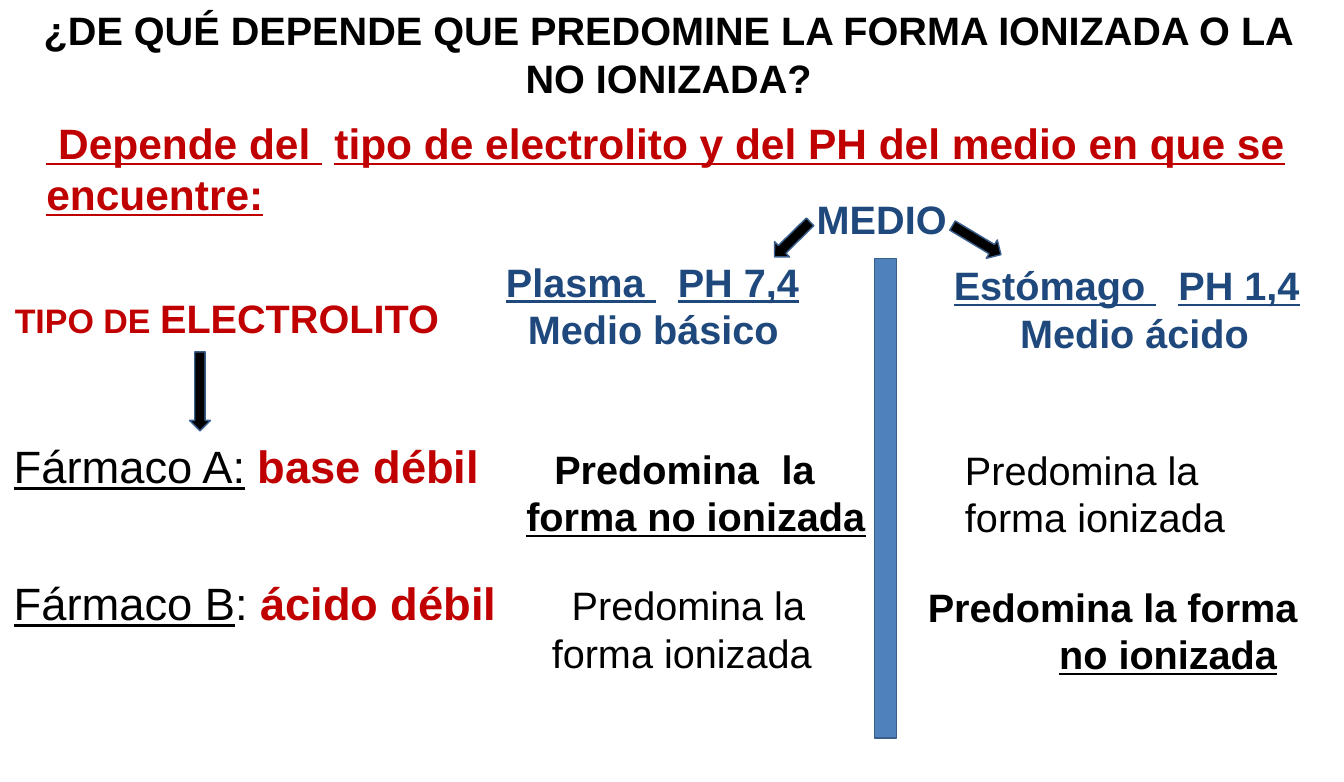
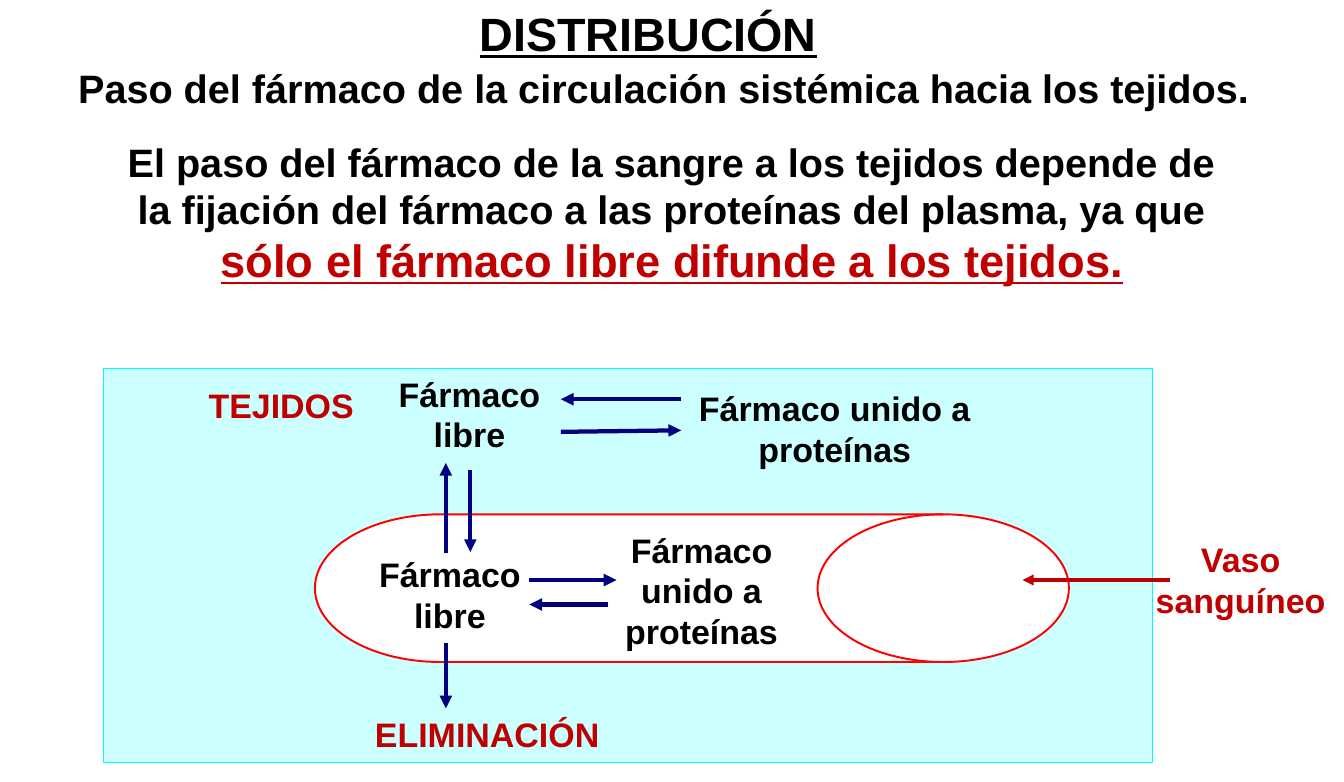
"""Build two slides on drug ionisation and distribution."""
from dataclasses import dataclass

from lxml import etree
from pptx import Presentation
from pptx.dml.color import RGBColor
from pptx.enum.shapes import MSO_CONNECTOR, MSO_SHAPE
from pptx.enum.text import MSO_ANCHOR, MSO_AUTO_SIZE, PP_ALIGN
from pptx.oxml.ns import qn
from pptx.util import Pt

EMU_PER_PX = 9144
SLIDE_WIDTH, SLIDE_HEIGHT = Pt(1899.25), Pt(1105.62)
INSET_X, INSET_Y = 20, 10
FONT = "Arial"
TITLE_AND_CONTENT = 1

LEFT, CENTER = PP_ALIGN.LEFT, PP_ALIGN.CENTER
TOP, NO_AUTOFIT = MSO_ANCHOR.TOP, MSO_AUTO_SIZE.NONE
RECTANGLE, DOWN_ARROW = MSO_SHAPE.RECTANGLE, MSO_SHAPE.DOWN_ARROW
DRUM = MSO_SHAPE.FLOWCHART_DIRECT_ACCESS_STORAGE
STRAIGHT = MSO_CONNECTOR.STRAIGHT

BLACK = RGBColor(0x00, 0x00, 0x00)
WHITE = RGBColor(0xFF, 0xFF, 0xFF)
DARK_RED = RGBColor(0xC0, 0x00, 0x00)
RED = RGBColor(0xFF, 0x00, 0x00)
TEXT_BLUE = RGBColor(0x1F, 0x49, 0x7D)
BAR_BLUE = RGBColor(0x4F, 0x81, 0xBD)
OUTLINE_BLUE = RGBColor(0x3A, 0x5F, 0x8C)
NAVY = RGBColor(0x00, 0x00, 0x80)
PALE_CYAN = RGBColor(0xCC, 0xFF, 0xFF)
CYAN = RGBColor(0x00, 0xFF, 0xFF)


@dataclass(frozen=True)
class Span:
    text: str
    size: int = 56
    color: RGBColor = BLACK
    bold: bool = True
    underline: bool = False
    tracking: int = 0


@dataclass(frozen=True)
class Line:
    spans: tuple[Span, ...]
    indent: int = 0


@dataclass(frozen=True)
class Label:
    left: int
    top: int
    width: int
    height: int
    lines: tuple[Line, ...]
    align: PP_ALIGN = LEFT
    spacing: float = 1.0


@dataclass(frozen=True)
class Figure:
    kind: MSO_SHAPE
    left: int
    top: int
    width: int
    height: int
    fill: RGBColor
    outline: RGBColor = OUTLINE_BLUE
    weight: float = 2
    rotation: float = 0


@dataclass(frozen=True)
class Arrow:
    start: tuple[int, int]
    end: tuple[int, int]
    color: RGBColor = NAVY
    weight: float = 6


def px(*lengths: int) -> list[int]:
    return [length * EMU_PER_PX for length in lengths]


def line(text: str, size: int = 56, color: RGBColor = BLACK, bold: bool = True,
         underline: bool = False, indent: int = 0) -> Line:
    return Line((Span(text, size, color, bold, underline),), indent)


def gapped_line(before: str, after: str, tracking: int, size: int = 56,
                color: RGBColor = BLACK, underline: bool = False,
                indent: int = 0) -> Line:
    return Line((Span(before, size, color, True, underline),
                 Span(" ", size, color, True, underline, tracking),
                 Span(after, size, color, True, underline)), indent)


def format_line(paragraph, content: Line, label: Label) -> None:
    paragraph.alignment = label.align
    paragraph.line_spacing = label.spacing
    paragraph.space_before = Pt(0)
    properties = paragraph._p.get_or_add_pPr()
    properties.set("marL", "0")
    properties.set("indent", str(content.indent * EMU_PER_PX))
    etree.SubElement(properties, qn("a:buNone"))
    for span in content.spans:
        run = paragraph.add_run()
        run.text = span.text
        run.font.name = FONT
        run.font.size = Pt(span.size)
        run.font.bold = span.bold
        run.font.underline = span.underline
        run.font.color.rgb = span.color
        if span.tracking:
            run._r.get_or_add_rPr().set("spc", str(span.tracking * 100))


def fill_label(shape, label: Label) -> None:
    shape.left, shape.top, shape.width, shape.height = px(
        label.left, label.top, label.width, label.height)
    frame = shape.text_frame
    frame.word_wrap = True
    frame.auto_size = NO_AUTOFIT
    frame.vertical_anchor = TOP
    frame.margin_left, frame.margin_right = px(INSET_X, INSET_X)
    frame.margin_top, frame.margin_bottom = px(INSET_Y, INSET_Y)
    for index, content in enumerate(label.lines):
        paragraph = frame.add_paragraph() if index else frame.paragraphs[0]
        format_line(paragraph, content, label)


def add_label(slide, label: Label) -> None:
    box = slide.shapes.add_textbox(
        *px(label.left, label.top, label.width, label.height))
    fill_label(box, label)


def add_figure(slide, figure: Figure) -> None:
    shape = slide.shapes.add_shape(
        figure.kind, *px(figure.left, figure.top, figure.width, figure.height))
    shape.shadow.inherit = False
    shape.rotation = figure.rotation
    shape.fill.solid()
    shape.fill.fore_color.rgb = figure.fill
    shape.line.color.rgb = figure.outline
    shape.line.width = Pt(figure.weight)


def add_arrow(slide, arrow: Arrow) -> None:
    connector = slide.shapes.add_connector(STRAIGHT, *px(*arrow.start, *arrow.end))
    connector.line.color.rgb = arrow.color
    connector.line.width = Pt(arrow.weight)
    properties = connector._element.spPr
    etree.SubElement(properties.find(qn("a:ln")), qn("a:tailEnd"), {"type": "triangle"})
    etree.SubElement(properties, qn("a:effectLst"))


def add_slide(presentation, title: Label, body: Label, figures: list[Figure],
              labels: list[Label], arrows: list[Arrow]) -> None:
    slide = presentation.slides.add_slide(
        presentation.slide_layouts[TITLE_AND_CONTENT])
    fill_label(slide.shapes.title, title)
    fill_label(slide.placeholders[1], body)
    for figure in figures:
        add_figure(slide, figure)
    for label in labels:
        add_label(slide, label)
    for arrow in arrows:
        add_arrow(slide, arrow)


def medium(left: int, top: int, width: int, name: str, acidity: str,
           description: str, indent: int) -> Label:
    return Label(left, top, width, 199, (
        gapped_line(name, acidity, 31, color=TEXT_BLUE, underline=True),
        line(description, color=TEXT_BLUE, indent=indent)))


def drug(top: int, name: Span, separator: Span, kind: str) -> Label:
    return Label(7, top, 1010, 130, (
        Line((name, separator, Span(kind, 64, DARK_RED)),),))


def caption(left: int, top: int, width: int, height: int, text: str,
            color: RGBColor = BLACK) -> Label:
    return Label(left, top, width, height, (line(text, 48, color),), CENTER)


def build_ionisation(presentation) -> None:
    title = Label(17, 2, 2591, 209, (line(
        "¿DE QUÉ DEPENDE QUE PREDOMINE LA FORMA IONIZADA O LA NO IONIZADA?"),), CENTER)
    body = Label(71, 220, 2560, 222, (gapped_line(
        " Depende del", "tipo de electrolito y del PH del medio en que se encuentre:",
        17, 60, DARK_RED, underline=True),))
    figures = [
        Figure(RECTANGLE, 1716, 508, 44, 941, BAR_BLUE),
        Figure(DOWN_ARROW, 372, 691, 41, 155, BLACK),
        Figure(DOWN_ARROW, 1534, 421, 42, 98, BLACK, rotation=45.5),
        Figure(DOWN_ARROW, 1896, 416, 42, 111, BLACK, rotation=301),
    ]
    labels = [
        Label(1583, 373, 606, 117, (line("MEDIO", color=TEXT_BLUE),)),
        Label(9, 568, 939, 117, (Line((
            Span("TIPO DE ", 48, DARK_RED), Span("ELECTROLITO", 56, DARK_RED))),)),
        medium(973, 496, 650, "Plasma", "PH 7,4", "Medio básico", 43),
        medium(1852, 503, 770, "Estómago", "PH 1,4", "Medio ácido", 130),
        drug(851, Span("Fármaco A:", 64, bold=False, underline=True),
             Span(" ", 64, bold=False), "base débil"),
        drug(1120, Span("Fármaco B", 64, bold=False, underline=True),
             Span(": ", 64, bold=False), "ácido débil"),
        Label(1013, 863, 730, 209, (
            gapped_line("Predomina", "la", 16, indent=55),
            line("forma no ionizada", underline=True))),
        Label(1063, 1131, 650, 209, (
            line("Predomina la", bold=False, indent=39),
            line("forma ionizada", bold=False))),
        Label(1874, 865, 650, 209, (
            line("Predomina la", bold=False),
            line("forma ionizada", bold=False))),
        Label(1801, 1134, 824, 209, (
            line("Predomina la forma"),
            line("no ionizada", underline=True, indent=258))),
    ]
    add_slide(presentation, title, body, figures, labels, [])


def build_distribution(presentation) -> None:
    title = Label(797, -1, 951, 131, (line("DISTRIBUCIÓN", 66, underline=True),), CENTER)
    body = Label(203, 260, 2232, 316, (Line((
        Span("El paso del fármaco de la sangre a los tejidos depende de la fijación "
             "del fármaco a las proteínas del plasma, ya que "),
        Span("sólo el fármaco libre difunde a los tejidos.", 64, DARK_RED,
             underline=True))),), CENTER)
    figures = [
        Figure(RECTANGLE, 203, 723, 2058, 774, PALE_CYAN, CYAN, 0.75),
        Figure(DRUM, 618, 1010, 1480, 290, WHITE, RED, 2.75),
    ]
    labels = [
        Label(59, 97, 2490, 123, (line(
            "Paso del fármaco de la circulación sistémica hacia los tejidos."),),
            CENTER, 1.2),
        caption(385, 746, 334, 103, "TEJIDOS", DARK_RED),
        caption(758, 723, 327, 186, "Fármaco libre"),
        caption(1337, 752, 603, 186, "Fármaco unido a proteínas"),
        caption(719, 1078, 328, 186, "Fármaco libre"),
        caption(1186, 1029, 382, 269, "Fármaco unido a proteínas"),
        caption(2232, 1048, 406, 182, "Vaso sanguíneo", DARK_RED),
        Label(716, 1391, 516, 101, (line("ELIMINACIÓN", 48, DARK_RED),)),
    ]
    arrows = [
        Arrow((1337, 784), (1101, 784)),
        Arrow((1101, 848), (1337, 845)),
        Arrow((875, 1086), (875, 909)),
        Arrow((923, 923), (923, 1084)),
        Arrow((1039, 1139), (1210, 1139)),
        Arrow((1194, 1187), (1039, 1187)),
        Arrow((875, 1262), (875, 1391)),
        Arrow((2297, 1139), (2007, 1139), DARK_RED, 5.25),
    ]
    add_slide(presentation, title, body, figures, labels, arrows)


def main() -> None:
    presentation = Presentation()
    presentation.slide_width, presentation.slide_height = SLIDE_WIDTH, SLIDE_HEIGHT
    build_ionisation(presentation)
    build_distribution(presentation)
    presentation.save("out.pptx")


if __name__ == "__main__":
    main()
